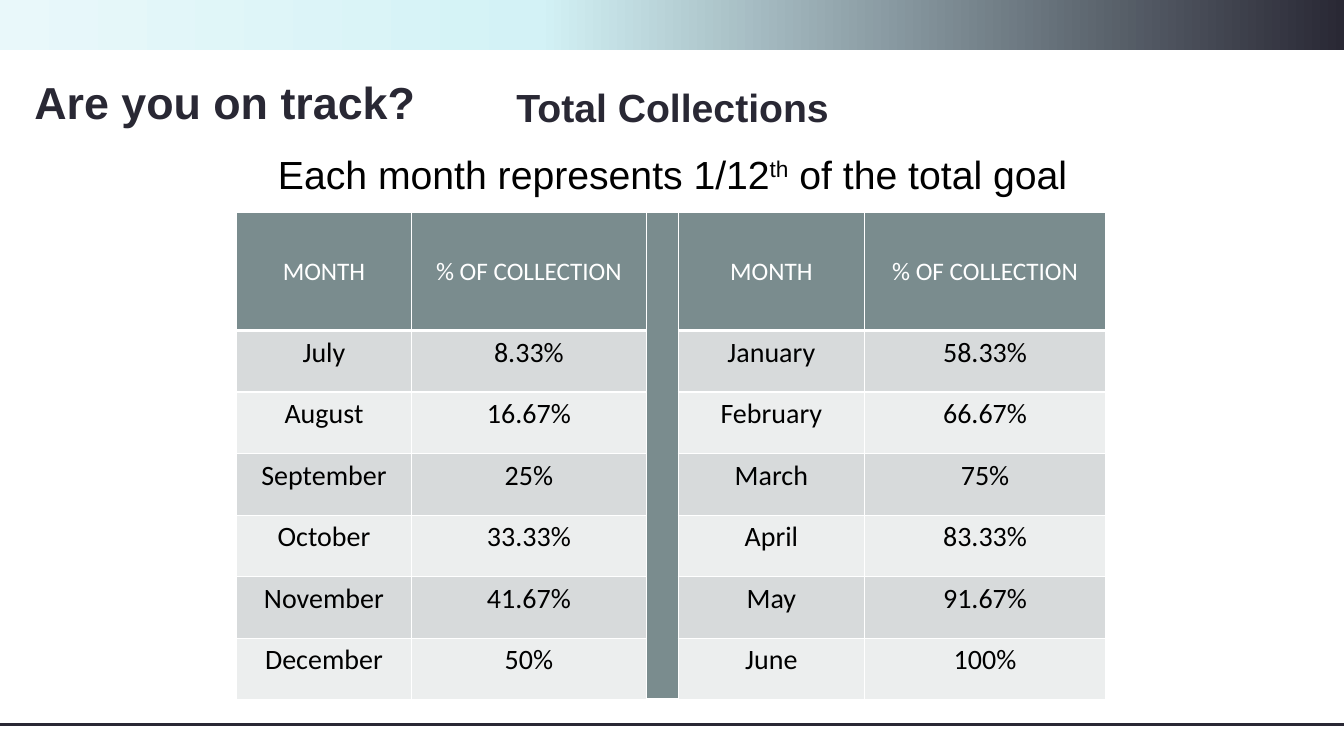
"""Build the monthly collections tracking slide."""
from copy import deepcopy

from lxml.etree import SubElement
from pptx import Presentation
from pptx.dml.color import RGBColor
from pptx.enum.shapes import MSO_CONNECTOR, MSO_SHAPE
from pptx.enum.text import MSO_ANCHOR, PP_ALIGN
from pptx.oxml.ns import qn
from pptx.util import Cm, Pt

COLORS = {
    "navy": "292834", "aqua": "D3F2F6", "pale": "E9F8FA",
    "header": "7A8C8E", "odd": "D7DADB", "even": "ECEEEE",
    "white": "FFFFFF", "black": "000000",
}
WIDTH, HEIGHT = 33.87, 19.05
MONTHS = ["July", "August", "September", "October", "November", "December",
          "January", "February", "March", "April", "May", "June"]
HEADINGS = ["MONTH", "% OF COLLECTION"]
COL_WIDTHS = [4.39, 5.94, 0.79, 4.7, 6.07]
HEADER_HEIGHT, ROW_HEIGHT = 2.97, 1.55
GAP_COL = 2


def rgb(name):
    return RGBColor.from_string(COLORS[name])


def style_run(r, size, color, bold=False, font="Arial"):
    r.font.name = font
    r.font.size = Pt(size)
    r.font.bold = bold
    r.font.color.rgb = rgb(color)


def add_band(slide):
    sp = slide.shapes.add_shape(MSO_SHAPE.RECTANGLE, 0, 0, Cm(WIDTH), Cm(1.27))
    sp.shadow.inherit = False
    sp.line.fill.background()
    sp.fill.gradient()
    sp.fill.gradient_angle = 0
    stops = sp._element.spPr.find(".//" + qn("a:gsLst"))
    stops.append(deepcopy(stops[0]))
    shades = [(0, "pale"), (0.4, "aqua"), (1, "navy")]
    for stop, (position, color) in zip(sp.fill.gradient_stops, shades):
        stop.position = position
        stop.color.rgb = rgb(color)


def add_rule(slide, y):
    line = slide.shapes.add_connector(
        MSO_CONNECTOR.STRAIGHT, 0, Cm(y), Cm(WIDTH), Cm(y))
    line.line.color.rgb = rgb("navy")
    line.line.width = Pt(1.75)
    SubElement(line._element.spPr, qn("a:effectLst"))


def set_title(slide, text):
    sp = slide.shapes.title
    sp.left, sp.top, sp.width, sp.height = Cm(0.61), Cm(1.88), Cm(21.79), Cm(1.52)
    tf = sp.text_frame
    tf.text = text
    tf.vertical_anchor = MSO_ANCHOR.MIDDLE
    p = tf.paragraphs[0]
    p.alignment = PP_ALIGN.LEFT
    p.line_spacing = 0.9
    style_run(p.runs[0], 32, "navy", True)


def add_intro(slide):
    sp = slide.shapes.add_textbox(Cm(5.99), Cm(1.88), Cm(21.92), Cm(3.2))
    tf = sp.text_frame
    tf.word_wrap = True
    tf.text = "Total Collections"
    style_run(tf.paragraphs[0].runs[0], 28, "navy", True)
    p = tf.add_paragraph()
    for text in ("Each month represents 1/12", "th", " of the total goal"):
        r = p.add_run()
        r.text = text
        style_run(r, 28, "black")
    p.runs[1].font._element.set("baseline", "30000")
    for p in tf.paragraphs:
        p.alignment = PP_ALIGN.CENTER
        p.space_before = Pt(12)
        p.line_spacing = 1.07


def set_borders(cell, bottom):
    tc_pr = cell._tc.get_or_add_tcPr()
    for side, width in (("L", 1), ("R", 1), ("T", 1), ("B", bottom)):
        ln = SubElement(tc_pr, qn("a:ln" + side), w=str(Pt(width)))
        fill = SubElement(ln, qn("a:solidFill"))
        SubElement(fill, qn("a:srgbClr"), val=COLORS["white"])


def fill_cell(cell, text, row):
    is_header = row == 0
    set_borders(cell, 3 if is_header else 1)
    cell.fill.solid()
    cell.fill.fore_color.rgb = rgb(
        "header" if is_header else "odd" if row % 2 else "even")
    cell.vertical_anchor = MSO_ANCHOR.MIDDLE if is_header else MSO_ANCHOR.TOP
    cell.text = text
    p = cell.text_frame.paragraphs[0]
    p.alignment = PP_ALIGN.CENTER
    for r in p.runs:
        style_run(r, 18 if is_header else 20,
                  "white" if is_header else "black", font="Calibri")


def add_collections_table(slide):
    half = len(MONTHS) // 2
    table = slide.shapes.add_table(
        half + 1, len(COL_WIDTHS), Cm(5.97), Cm(5.36), Cm(sum(COL_WIDTHS)),
        Cm(HEADER_HEIGHT + half * ROW_HEIGHT)).table
    for col, width in zip(table.columns, COL_WIDTHS):
        col.width = Cm(width)
    for i, row in enumerate(table.rows):
        row.height = Cm(ROW_HEIGHT if i else HEADER_HEIGHT)
    for block, first_col in enumerate((0, GAP_COL + 1)):
        for row in range(half + 1):
            n = block * half + row
            texts = HEADINGS
            if row:
                texts = [MONTHS[n - 1], f"{round(100 * n / len(MONTHS), 2):g}%"]
            for offset, text in enumerate(texts):
                fill_cell(table.cell(row, first_col + offset), text, row)
    gap = table.cell(0, GAP_COL)
    gap.merge(table.cell(half, GAP_COL))
    fill_cell(gap, "", 0)


def main():
    prs = Presentation()
    prs.slide_width, prs.slide_height = Cm(WIDTH), Cm(HEIGHT)
    slide = prs.slides.add_slide(prs.slide_layouts[5])
    add_band(slide)
    add_rule(slide, 18.26)
    set_title(slide, "Are you on track?")
    add_intro(slide)
    add_collections_table(slide)
    prs.save("out.pptx")


if __name__ == "__main__":
    main()
